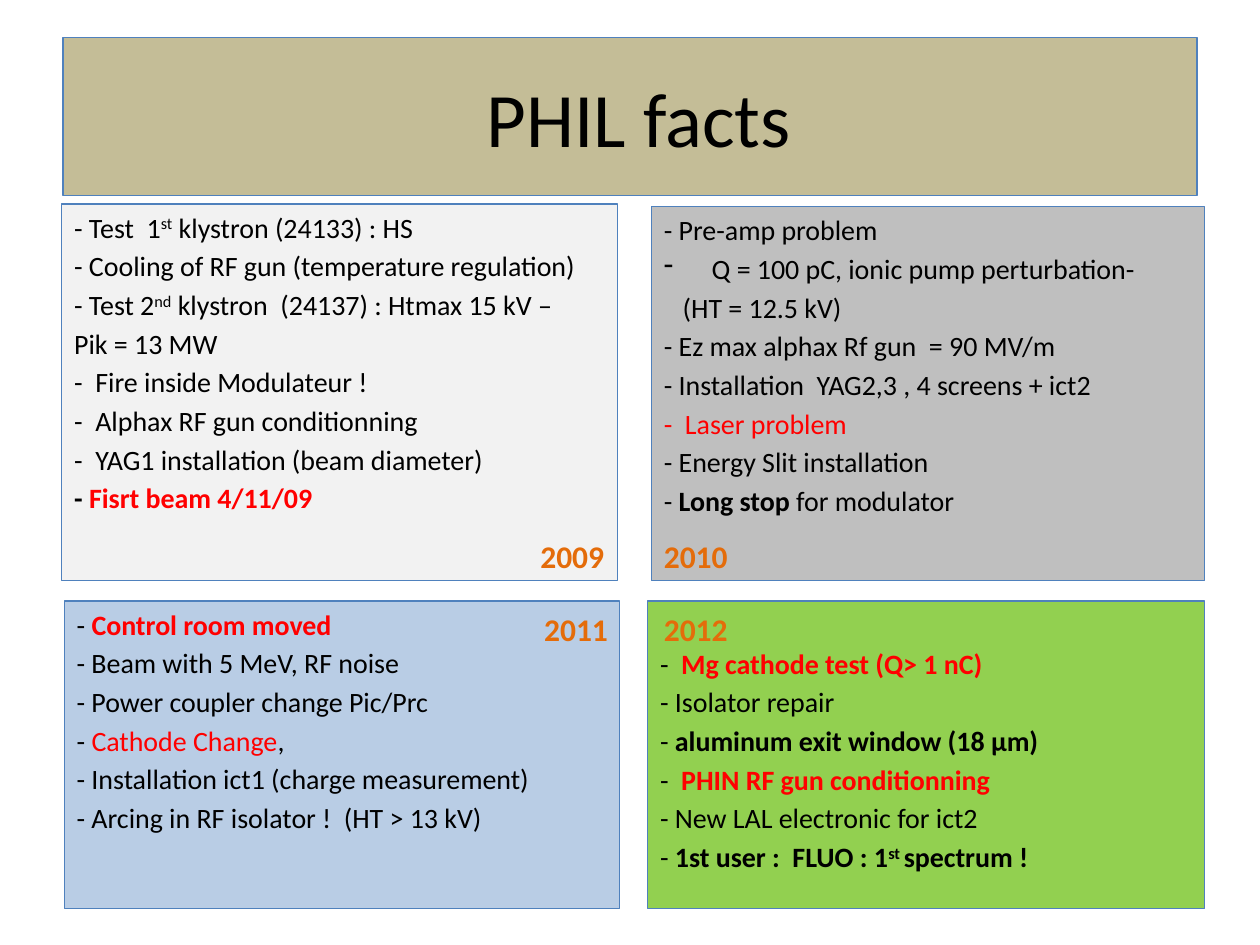
from lxml import etree
from pptx import Presentation
from pptx.dml.color import RGBColor
from pptx.enum.shapes import MSO_SHAPE
from pptx.enum.text import MSO_ANCHOR, PP_ALIGN
from pptx.oxml.ns import qn
from pptx.util import Inches, Pt

RECTANGLE = MSO_SHAPE.RECTANGLE
TOP, MIDDLE = MSO_ANCHOR.TOP, MSO_ANCHOR.MIDDLE
LEFT, CENTER = PP_ALIGN.LEFT, PP_ALIGN.CENTER
FONT = "Calibri"
COLORS = {
    "title": "C4BD97", "line": "4F81BD", "text": "000000", "alert": "FF0000",
    "year": "E46C0A", "2009": "F2F2F2", "2010": "BFBFBF", "2011": "B9CDE5",
    "2012": "92D050",
}
LINE_PITCH = 0.31
INSET = 0.05

PLAIN, BOLD, RED, RAISED = "", "b", "r", "^"
PANELS = {
    "2009": ((0.49, 1.62, 4.41, 2.99), (4.19, 4.21), 0, [
        [("- Test  1", PLAIN), ("st", RAISED), (" klystron (24133) : HS", PLAIN)],
        "- Cooling of RF gun (temperature regulation)",
        [("- Test 2", PLAIN), ("nd", RAISED),
         (" klystron  (24137) : Htmax 15 kV –", PLAIN)],
        "Pik = 13 MW",
        "-  Fire inside Modulateur !",
        "-  Alphax RF gun conditionning",
        "-  YAG1 installation (beam diameter)",
        [("- ", BOLD), ("Fisrt beam 4/11/09", BOLD + RED)],
    ]),
    "2010": ((5.17, 1.64, 4.39, 2.97), (5.17, 4.21), 0, [
        "- Pre-amp problem",
        "Q = 100 pC, ionic pump perturbation-",
        "(HT = 12.5 kV)",
        "- Ez max alphax Rf gun  = 90 MV/m",
        "- Installation  YAG2,3 , 4 screens + ict2",
        [("-  Laser problem", RED)],
        "- Energy Slit installation",
        [("- ", PLAIN), ("Long stop ", BOLD), ("for modulator", PLAIN)],
    ]),
    "2011": ((0.51, 4.77, 4.41, 2.44), (4.22, 4.79), 0, [
        [("- ", PLAIN), ("Control room moved", BOLD + RED)],
        "- Beam with 5 MeV, RF noise",
        "- Power coupler change Pic/Prc",
        [("- ", PLAIN), ("Cathode Change", RED), (",", PLAIN)],
        "- Installation ict1 (charge measurement)",
        "- Arcing in RF isolator !  (HT > 13 kV)",
    ]),
    "2012": ((5.14, 4.77, 4.42, 2.44), (5.17, 4.79), 1, [
        [("- ", PLAIN), (" Mg cathode test (Q> 1 nC)", BOLD + RED)],
        "- Isolator repair",
        [("- ", PLAIN), ("aluminum exit window (18 µm)", BOLD)],
        [("- ", PLAIN), (" PHIN RF gun conditionning", BOLD + RED)],
        "- New LAL electronic for ict2",
        [("- ", PLAIN), ("1st user :  FLUO : 1", BOLD), ("st ", BOLD + RAISED),
         ("spectrum !", BOLD)],
    ]),
}


def color(name):
    """Return the named colour."""
    return RGBColor.from_string(COLORS[name])


def paint(shape, fill):
    """Give a shape its fill and the common thin outline."""
    shape.fill.solid()
    shape.fill.fore_color.rgb = color(fill)
    shape.line.color.rgb = color("line")
    shape.line.width = Pt(0.75)


def set_font(para, size, name="text"):
    """Set the font that a whole paragraph shares."""
    para.font.name = FONT
    para.font.size = Pt(size)
    para.font.color.rgb = color(name)


def indent(para, margin, bullet=None):
    """Indent a paragraph, hanging it on a bullet if one is given."""
    properties = para._p.get_or_add_pPr()
    properties.set("marL", str(Inches(margin)))
    if bullet:
        properties.set("indent", str(-Inches(margin)))
        mark = etree.Element(qn("a:buChar"), char=bullet)
        properties.find(qn("a:spcBef")).addnext(mark)


def add_spans(para, spans):
    """Fill a paragraph with styled runs."""
    for text, style in spans:
        span = para.add_run()
        span.text = text
        if BOLD in style:
            span.font.bold = True
        if RED in style:
            span.font.color.rgb = color("alert")
        if RAISED in style:
            span.font._element.set("baseline", "30000")


def add_title(page, text):
    """Place and format the title placeholder."""
    title = page.shapes.title
    title.left, title.top = Inches(0.5), Inches(0.3)
    title.width, title.height = Inches(9), Inches(1.25)
    paint(title, "title")
    title.text_frame.vertical_anchor = MIDDLE
    title.text_frame.text = text
    para = title.text_frame.paragraphs[0]
    para.alignment = CENTER
    set_font(para, 44)


def add_panel(page, year, place, skipped_lines, facts):
    """Add the coloured panel with one year's facts."""
    panel = page.shapes.add_shape(RECTANGLE, *map(Inches, place))
    panel.shadow.inherit = False
    paint(panel, year)
    frame = panel.text_frame
    frame.word_wrap = True
    frame.vertical_anchor = TOP
    frame.margin_top = Inches(INSET + skipped_lines * LINE_PITCH)
    for number, fact in enumerate(facts):
        para = frame.add_paragraph() if number else frame.paragraphs[0]
        para.alignment = LEFT
        para.space_before = Pt(2.9)
        set_font(para, 16)
        add_spans(para, [(fact, PLAIN)] if isinstance(fact, str) else fact)
        if fact == "(HT = 12.5 kV)":
            indent(para, 0.15)
        elif isinstance(fact, str) and fact.startswith("Q ="):
            indent(para, 0.38, "-")


def add_year(page, year, corner):
    """Add the year label of a panel."""
    left, top = corner
    box = page.shapes.add_textbox(*map(Inches, (left, top, 0.71, 0.4)))
    box.text_frame.word_wrap = False
    box.text_frame.text = year
    para = box.text_frame.paragraphs[0]
    set_font(para, 18, "year")
    para.font.bold = True


def main():
    """Build the slide and save it."""
    deck = Presentation()
    deck.slide_width, deck.slide_height = Inches(10), Inches(7.5)
    page = deck.slides.add_slide(deck.slide_layouts[5])
    add_title(page, " PHIL facts")
    for year, (place, _, skipped_lines, facts) in PANELS.items():
        add_panel(page, year, place, skipped_lines, facts)
    for year, (_, corner, _, _) in PANELS.items():
        add_year(page, year, corner)
    deck.save("out.pptx")


if __name__ == "__main__":
    main()
